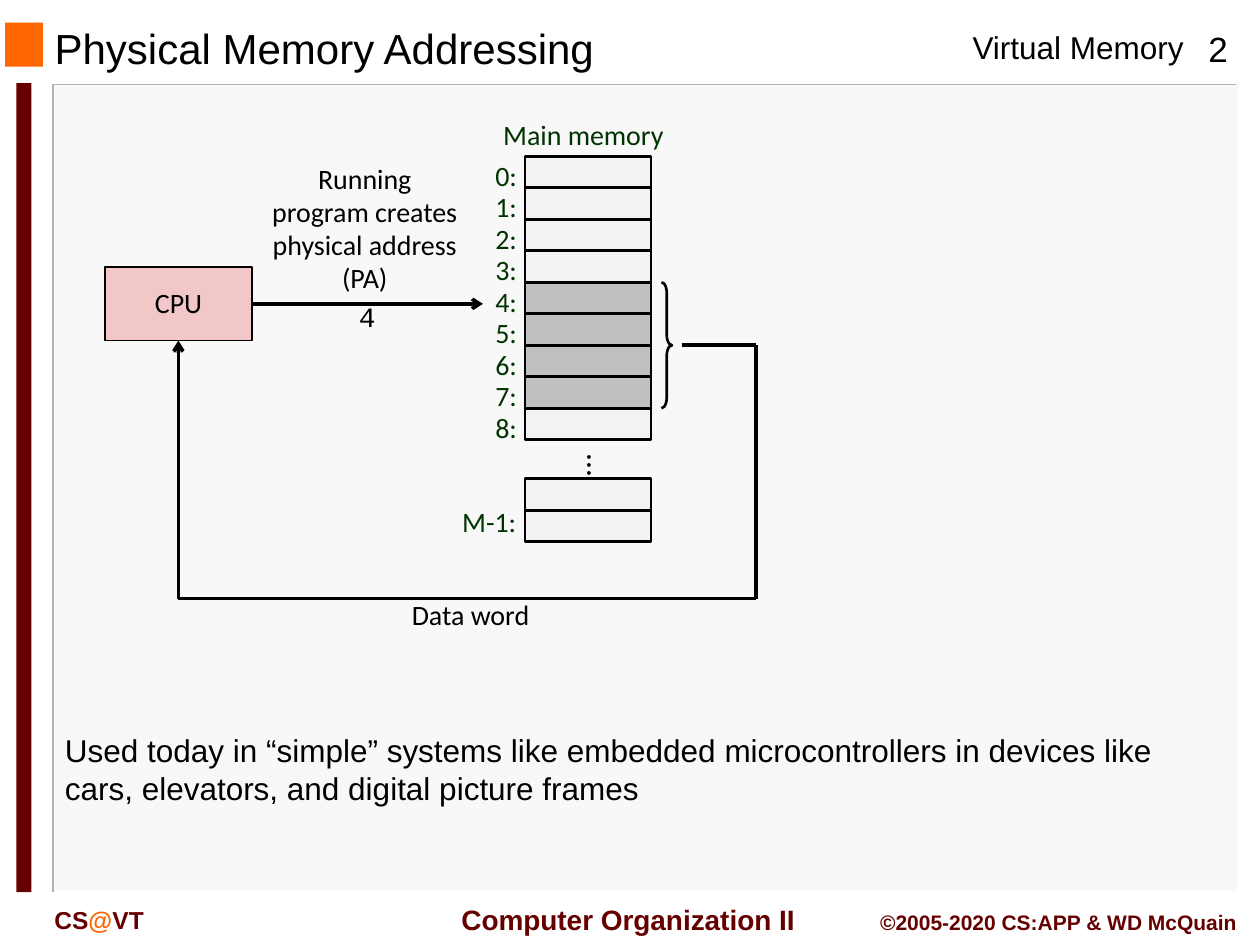
from dataclasses import dataclass

from lxml import etree
from pptx import Presentation
from pptx.dml.color import RGBColor
from pptx.enum.shapes import MSO_CONNECTOR, MSO_SHAPE
from pptx.enum.text import MSO_ANCHOR, PP_ALIGN
from pptx.oxml.ns import qn
from pptx.shapes.autoshape import Shape
from pptx.shapes.connector import Connector
from pptx.util import Inches, Pt

STRAIGHT, ELBOW = MSO_CONNECTOR.STRAIGHT, MSO_CONNECTOR.ELBOW
RECTANGLE, RIGHT_BRACE = MSO_SHAPE.RECTANGLE, MSO_SHAPE.RIGHT_BRACE
LEFT, CENTER, RIGHT = PP_ALIGN.LEFT, PP_ALIGN.CENTER, PP_ALIGN.RIGHT
TOP, MIDDLE = MSO_ANCHOR.TOP, MSO_ANCHOR.MIDDLE
BOTTOM_SIDE, RIGHT_SIDE = 2, 3

BLACK = RGBColor(0x00, 0x00, 0x00)
WHITE = RGBColor(0xFF, 0xFF, 0xFF)
ORANGE = RGBColor(0xFF, 0x66, 0x00)
MAROON = RGBColor(0x66, 0x00, 0x00)
GREEN = RGBColor(0x00, 0x33, 0x00)
PINK = RGBColor(0xF1, 0xC7, 0xC7)
PANEL_GRAY = RGBColor(0xF8, 0xF8, 0xF8)
EDGE_GRAY = RGBColor(0xB2, 0xB2, 0xB2)
FREE_CELL = RGBColor(0xF2, 0xF2, 0xF2)
WORD_CELL = RGBColor(0xC0, 0xC0, 0xC0)

presentation = Presentation()
presentation.slide_width = Inches(10)
presentation.slide_height = Inches(7.5)
slide = presentation.slides.add_slide(presentation.slide_layouts[5])

# The grid has 120 columns and 90 rows; a memory cell is 12 columns by 3 rows.
GRID_UNIT = presentation.slide_width // 120
CELL_LEFT, CELL_WIDTH, CELL_HEIGHT = 50, 12, 3
MEMORY_TOP, LAST_CELLS_TOP = 14.88, 45.6
CELL_COUNT, WORD_ADDRESSES = 9, range(4, 8)


def grid(count: float) -> int:
    """Turn a number of columns or rows into a length."""
    return round(count * GRID_UNIT)


@dataclass(frozen=True)
class Box:
    left: float
    top: float
    width: float
    height: float

    def lengths(self) -> tuple[int, int, int, int]:
        return grid(self.left), grid(self.top), grid(self.width), grid(self.height)


@dataclass(frozen=True)
class Style:
    size: float
    font: str = "Arial"
    color: RGBColor = BLACK
    bold: bool = False
    align: PP_ALIGN = LEFT
    anchor: MSO_ANCHOR = TOP
    spacing: float = 1.0
    wrap: bool = True


@dataclass(frozen=True)
class Label:
    box: Box
    lines: tuple[str, ...]
    style: Style


ADDRESS = Style(16, "Calibri", GREEN, spacing=0.88, wrap=False)
MEMORY_TITLE = Style(16, "Calibri", GREEN, align=CENTER, spacing=0.88, wrap=False)
DIAGRAM = Style(16, "Calibri", align=CENTER, anchor=MIDDLE, spacing=0.98, wrap=False)
DIAGRAM_WRAPPED = Style(16, "Calibri", align=CENTER, anchor=MIDDLE, spacing=0.98)
ELLIPSIS = Style(18, "Calibri", align=CENTER, anchor=MIDDLE, spacing=0.98, wrap=False)

LABELS = [
    Label(Box(91.44, 2.04, 22.56, 4.8), ("Virtual Memory",), Style(18, wrap=False)),
    Label(Box(112, 2.04, 8, 5.16), ("2",), Style(20, align=CENTER)),
    Label(Box(41.76, 85.32, 35.4, 4.44), (" Computer Organization II",),
          Style(16, color=MAROON, bold=True, align=CENTER, anchor=MIDDLE, wrap=False)),
    Label(Box(82, 86.04, 37, 3.6), ("©2005-2020 CS:APP & WD McQuain",),
          Style(12, color=MAROON, bold=True, align=RIGHT)),
    Label(Box(5, 69, 113, 8.52),
          ("Used today in “simple” systems like embedded microcontrollers in devices "
           "like cars, elevators, and digital picture frames",), Style(18)),
    Label(Box(46.44, 11.04, 18.24, 3.96), ("Main memory",), MEMORY_TITLE),
    Label(Box(42.84, 47.88, 7.68, 3.96), ("M-1:",), ADDRESS),
    Label(Box(24.48, 14.88, 20.52, 13.92),
          ("Running program creates", "physical address", "(PA)"), DIAGRAM_WRAPPED),
    Label(Box(37.8, 56.4, 14.04, 4.44), ("Data word",), DIAGRAM),
    Label(Box(33, 27.96, 4.08, 4.44), ("4",), Style(16, "Courier New", wrap=False)),
]


def add_run(paragraph, text: str, style: Style, color: RGBColor) -> None:
    run = paragraph.add_run()
    run.text = text
    run.font.name = style.font
    run.font.size = Pt(style.size)
    run.font.bold = style.bold
    run.font.color.rgb = color


def write(shape: Shape, lines: tuple[str, ...], style: Style) -> None:
    frame = shape.text_frame
    frame.word_wrap = style.wrap
    frame.vertical_anchor = style.anchor
    for index, line in enumerate(lines):
        paragraph = frame.add_paragraph() if index else frame.paragraphs[0]
        paragraph.alignment = style.align
        paragraph.line_spacing = style.spacing
        add_run(paragraph, line, style, style.color)


def add_label(label: Label) -> Shape:
    shape = slide.shapes.add_textbox(*label.box.lengths())
    write(shape, label.lines, label.style)
    return shape


def add_block(box: Box, fill: RGBColor, line_width: float = 0) -> Shape:
    """Add a filled rectangle, with a black outline if it has a line width."""
    shape = slide.shapes.add_shape(RECTANGLE, *box.lengths())
    shape.shadow.inherit = False
    shape.fill.solid()
    shape.fill.fore_color.rgb = fill
    if line_width:
        shape.line.color.rgb = BLACK
        shape.line.width = Pt(line_width)
    else:
        shape.line.fill.background()
    return shape


def add_edge(points: list[tuple[float, float]], color: RGBColor) -> None:
    start, *others = [(grid(x), grid(y)) for x, y in points]
    builder = slide.shapes.build_freeform(*start)
    builder.add_line_segments(others, close=False)
    edge = builder.convert_to_shape()
    edge.shadow.inherit = False
    edge.fill.background()
    edge.line.color.rgb = color
    edge.line.width = Pt(1)


def add_line(start: tuple[float, float], end: tuple[float, float],
             kind: MSO_CONNECTOR = STRAIGHT, arrow: bool = False) -> Connector:
    connector = slide.shapes.add_connector(kind, *map(grid, start + end))
    connector.line.color.rgb = BLACK
    connector.line.width = Pt(2)
    properties = connector._element.spPr
    if arrow:
        etree.SubElement(properties.find(qn("a:ln")), qn("a:tailEnd"), type="arrow")
    etree.SubElement(properties, qn("a:effectLst"))
    return connector


def draw_frame() -> None:
    add_block(Box(5.16, 8.04, 112.8, 76.92), PANEL_GRAY)
    add_edge([(117.72, 8.04), (5.04, 8.04), (5.04, 84.96)], EDGE_GRAY)
    add_edge([(117.96, 8.04), (117.96, 84.96), (5.28, 84.96)], WHITE)
    add_block(Box(0.48, 2.16, 3.6, 4.2), ORANGE)
    add_block(Box(1.56, 7.92, 1.44, 77.04), MAROON)

    title = slide.shapes.title
    title.left, title.top, title.width, title.height = Box(4, 2.28, 76, 4.56).lengths()
    write(title, ("Physical Memory Addressing",), Style(24, anchor=MIDDLE))

    course_style = Style(14, color=MAROON, bold=True)
    course = add_label(Label(Box(4, 85.56, 18, 4), ("CS",), course_style))
    for text, color in (("@", ORANGE), ("VT", MAROON)):
        add_run(course.text_frame.paragraphs[0], text, course_style, color)


def draw_memory() -> None:
    for address in range(CELL_COUNT):
        top = MEMORY_TOP + address * CELL_HEIGHT
        fill = WORD_CELL if address in WORD_ADDRESSES else FREE_CELL
        add_block(Box(CELL_LEFT, top, CELL_WIDTH, CELL_HEIGHT), fill, 1.5)
        add_label(Label(Box(46, top, 4.44, 3.96), (f"{address}:",), ADDRESS))
    for row in range(2):
        top = LAST_CELLS_TOP + row * CELL_HEIGHT
        add_block(Box(CELL_LEFT, top, CELL_WIDTH, CELL_HEIGHT), FREE_CELL, 1.5)

    ellipsis = add_label(Label(Box(51, 42, 12, 3), ("...",), ELLIPSIS))
    ellipsis.text_frame._txBody.bodyPr.set("vert", "eaVert")
    ellipsis.text_frame.paragraphs[0]._p.get_or_add_pPr().set("rtl", "1")

    word_box = Box(63, MEMORY_TOP + WORD_ADDRESSES[0] * CELL_HEIGHT,
                   1, len(WORD_ADDRESSES) * CELL_HEIGHT)
    brace = slide.shapes.add_shape(RIGHT_BRACE, *word_box.lengths())
    brace.adjustments[0] = 1
    brace.shadow.inherit = False
    brace.fill.background()
    brace.line.color.rgb = BLACK
    brace.line.width = Pt(1.5)


def draw_data_path() -> None:
    cpu = add_block(Box(10, 25.44, 14, 7), PINK, 1)
    write(cpu, ("CPU",), DIAGRAM)
    address_arrow = add_line((24, 28.94), (46, 28.94), arrow=True)
    address_arrow.begin_connect(cpu, RIGHT_SIDE)
    add_line((65, 32.88), (72, 32.88))
    add_line((72, 32.88), (72, 57))
    data_arrow = add_line((72, 57), (17, 32.44), ELBOW, arrow=True)
    guides = data_arrow._element.spPr.find(qn("a:prstGeom")).get_or_add_avLst()
    etree.SubElement(guides, qn("a:gd"), name="adj1", fmla="val 100000")
    data_arrow.end_connect(cpu, BOTTOM_SIDE)


draw_frame()
draw_memory()
draw_data_path()
for label in LABELS:
    add_label(label)
presentation.save("out.pptx")
